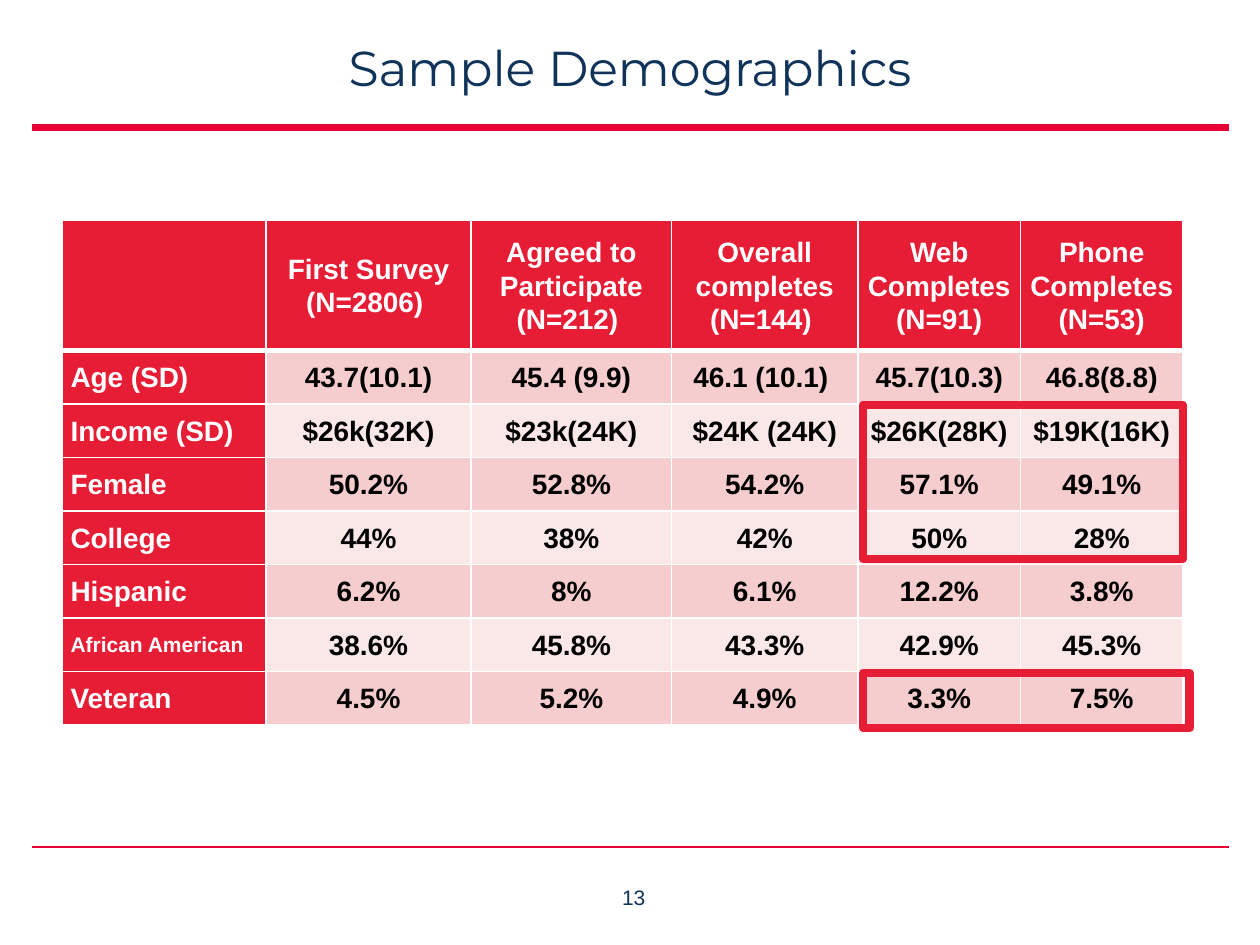
from typing import NamedTuple

from lxml import etree
from pptx import Presentation
from pptx import util as u
from pptx.dml.color import RGBColor
from pptx.enum import shapes, text
from pptx.oxml import ns

NAVY = RGBColor(0x10, 0x33, 0x5A)
RULE_RED = RGBColor(0xE7, 0x00, 0x33)
TABLE_RED = RGBColor(0xE6, 0x1D, 0x35)
DARK_PINK = RGBColor(0xF5, 0xCD, 0xCE)
LIGHT_PINK = RGBColor(0xFA, 0xE8, 0xE8)
WHITE = RGBColor(0xFF, 0xFF, 0xFF)
BLACK = RGBColor(0x00, 0x00, 0x00)

SLIDE_WIDTH, SLIDE_HEIGHT = 10, 7.5
MARGIN = 0.25
CONTENT_WIDTH = SLIDE_WIDTH - 2 * MARGIN
TABLE_LEFT, TABLE_TOP = 0.49, 1.75
COLUMN_WIDTHS = [1.62, 1.63, 1.59, 1.48, 1.29, 1.29]
HEADER_HEIGHT, ROW_HEIGHT = 1.03, 0.425

ROWS = [
    ["", "First Survey (N=2806) ", "Agreed to Participate (N=212) ",
     "Overall completes (N=144) ", "Web Completes (N=91)", "Phone Completes (N=53)"],
    ["Age (SD)", "43.7(10.1)", "45.4 (9.9)", "46.1 (10.1) ", "45.7(10.3)", "46.8(8.8)"],
    ["Income (SD)", "$26k(32K)", "$23k(24K)", "$24K (24K)", "$26K(28K)", "$19K(16K)"],
    ["Female", "50.2%", "52.8%", "54.2%", "57.1%", "49.1%"],
    ["College", "44%", "38%", "42%", "50%", "28%"],
    ["Hispanic", "6.2%", "8%", "6.1%", "12.2%", "3.8%"],
    ["African American", "38.6%", "45.8%", "43.3%", "42.9%", "45.3%"],
    ["Veteran", "4.5%", "5.2%", "4.9%", "3.3%", "7.5%"],
]
SMALL_LABEL = "African American"


class Highlight(NamedTuple):
    """A frame around table rows, with its width and height in inches."""
    first_row: int
    width: float
    height: float


HIGHLIGHTS = [Highlight(7, 2.59, 0.44), Highlight(2, 2.54, 1.22)]


def add_rule(page, y: float, weight: float) -> None:
    rule = page.shapes.add_connector(
        shapes.MSO_CONNECTOR.STRAIGHT, u.Inches(MARGIN), u.Inches(y),
        u.Inches(MARGIN + CONTENT_WIDTH), u.Inches(y))
    rule.line.color.rgb = RULE_RED
    rule.line.width = u.Pt(weight)
    etree.SubElement(rule._element.spPr, ns.qn("a:effectLst"))


def add_text(page, words: str, left: float, top: float, width: float,
             height: float, font: str, size: float, inset: float) -> None:
    box = page.shapes.add_textbox(*map(u.Inches, (left, top, width, height)))
    frame = box.text_frame
    frame.word_wrap = True
    frame.margin_left = frame.margin_right = u.Inches(inset)
    frame.margin_top = frame.margin_bottom = u.Inches(inset)
    frame.text = words
    para = frame.paragraphs[0]
    para.alignment = text.PP_ALIGN.CENTER
    span = para.runs[0]
    span.font.name, span.font.size = font, u.Pt(size)
    span.font.color.rgb = NAVY


def add_border(cell, side: str, weight: float) -> None:
    line = etree.SubElement(cell._tc.get_or_add_tcPr(), ns.qn(f"a:ln{side}"),
                            w=str(u.Pt(weight)))
    fill = etree.SubElement(line, ns.qn("a:solidFill"))
    etree.SubElement(fill, ns.qn("a:srgbClr"), val=str(WHITE))


def style_cell(cell, row: int, column: int, words: str) -> None:
    is_heading = row == 0 or column == 0
    heavy_side = {0: "B", 1: "T"}.get(row)
    for side in "LRTB":
        add_border(cell, side, 3 if side == heavy_side else 1)
    cell.fill.solid()
    cell.fill.fore_color.rgb = (
        TABLE_RED if is_heading else DARK_PINK if row % 2 else LIGHT_PINK)
    cell.vertical_anchor = text.MSO_ANCHOR.MIDDLE
    cell.margin_left = cell.margin_right = u.Inches(0.07)
    cell.margin_top = cell.margin_bottom = 0
    if not words:
        return
    cell.text = words
    para = cell.text_frame.paragraphs[0]
    para.line_spacing = 1.07
    para.alignment = text.PP_ALIGN.CENTER if column else text.PP_ALIGN.LEFT
    font = para.runs[0].font
    font.name, font.bold = "Arial", True
    font.size = u.Pt(12 if words == SMALL_LABEL else 16)
    font.color.rgb = WHITE if is_heading else BLACK


def add_demographics(page) -> None:
    height = HEADER_HEIGHT + ROW_HEIGHT * (len(ROWS) - 1)
    table = page.shapes.add_table(
        len(ROWS), len(COLUMN_WIDTHS), u.Inches(TABLE_LEFT), u.Inches(TABLE_TOP),
        u.Inches(sum(COLUMN_WIDTHS)), u.Inches(height)).table
    for column, width in zip(table.columns, COLUMN_WIDTHS):
        column.width = u.Inches(width)
    for r, words in enumerate(ROWS):
        table.rows[r].height = u.Inches(ROW_HEIGHT if r else HEADER_HEIGHT)
        for c, word in enumerate(words):
            style_cell(table.cell(r, c), r, c, word)


def add_highlight(page, highlight: Highlight) -> None:
    left = TABLE_LEFT + sum(COLUMN_WIDTHS[:4]) + 0.04
    top = TABLE_TOP + HEADER_HEIGHT + ROW_HEIGHT * (highlight.first_row - 1) + 0.01
    frame = page.shapes.add_shape(
        shapes.MSO_SHAPE.RECTANGLE, u.Inches(left), u.Inches(top),
        u.Inches(highlight.width), u.Inches(highlight.height))
    frame.shadow.inherit = False
    frame.fill.background()
    frame.line.color.rgb = TABLE_RED
    frame.line.width = u.Pt(4.72)
    line = frame.line._get_or_add_ln()
    etree.SubElement(line, ns.qn("a:round"))


def main() -> None:
    deck = Presentation()
    deck.slide_width = u.Inches(SLIDE_WIDTH)
    deck.slide_height = u.Inches(SLIDE_HEIGHT)
    page = deck.slides.add_slide(deck.slide_layouts[6])
    add_rule(page, 1.01, 4)
    add_rule(page, 6.72, 1)
    add_text(page, "13", 4.53, 6.97, 1, 0.38, "Arial", 12, 0.05)
    add_demographics(page)
    add_text(page, "Sample Demographics", MARGIN, 0.3, CONTENT_WIDTH, 0.71,
             "Montserrat", 28, 0)
    for highlight in HIGHLIGHTS:
        add_highlight(page, highlight)
    deck.save("out.pptx")


if __name__ == "__main__":
    main()
